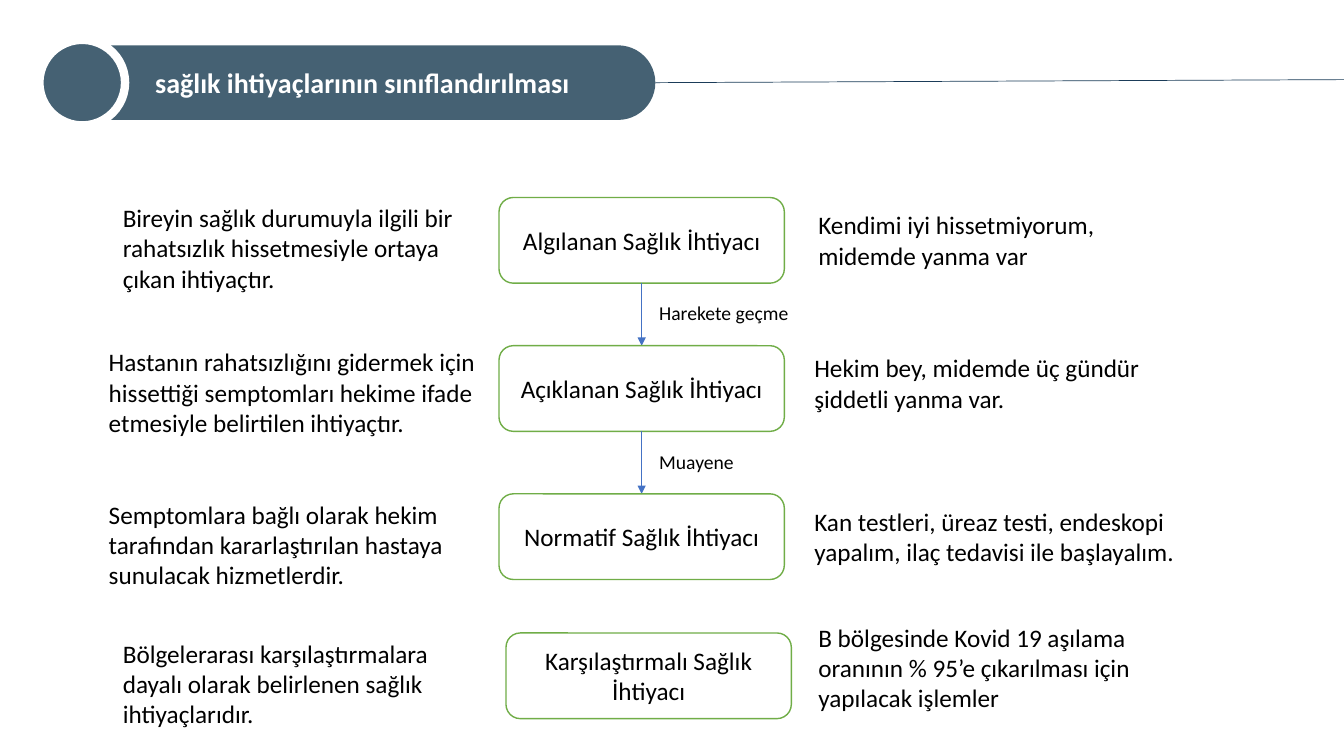
from collections import namedtuple

from lxml.etree import SubElement
from pptx import Presentation
from pptx.dml.color import RGBColor
from pptx.enum.shapes import MSO_CONNECTOR, MSO_SHAPE
from pptx.enum.text import MSO_ANCHOR, PP_ALIGN
from pptx.oxml.ns import qn
from pptx.util import Inches, Pt

# Every length is in hundredths of the slide's width (x) or height (y).
WIDTH, HEIGHT = Inches(13.33), Inches(7.5)
SLATE, NAVY, GREEN, BLUE = "456173", "1B3C59", "70AD47", "4472C4"
WHITE, BLACK = "FFFFFF", "000000"

Box = namedtuple("Box", "left top width height")
Side = namedtuple("Side", "left shift width lines text")
Stage = namedtuple("Stage", "name box definition example step")

FIRST_TOP, PITCH = 26.13, 19.6
NEED_LEFT, NEED_WIDTH, NEED_HEIGHT = 37.13, 21.23, 11.33


def stage_box(row):
    return Box(NEED_LEFT, FIRST_TOP + row * PITCH, NEED_WIDTH, NEED_HEIGHT)


STAGES = [
    Stage("Algılanan Sağlık İhtiyacı", stage_box(0),
          Side(8.4, 0, 27, 3, "Bireyin sağlık durumuyla ilgili bir rahatsızlık "
               "hissetmesiyle ortaya çıkan ihtiyaçtır."),
          Side(60.15, 0.94, 29.03, 2, "Kendimi iyi hissetmiyorum, midemde yanma var"),
          "Harekete geçme"),
    Stage("Açıklanan Sağlık İhtiyacı", stage_box(1),
          Side(7.35, -0.53, 29.03, 3, "Hastanın rahatsızlığını gidermek için hissettiği "
               "semptomları hekime ifade etmesiyle belirtilen ihtiyaçtır."),
          Side(59.85, 0.27, 29.03, 2, "Hekim bey, midemde üç gündür şiddetli yanma var."),
          "Muayene"),
    Stage("Normatif Sağlık İhtiyacı", stage_box(2),
          Side(7.35, 0, 28.05, 3, "Semptomlara bağlı olarak hekim tarafından "
               "kararlaştırılan hastaya sunulacak hizmetlerdir."),
          Side(59.85, 0.94, 29.03, 2, "Kan testleri, üreaz testi, endeskopi yapalım, "
               "ilaç tedavisi ile başlayalım."),
          None),
    Stage("Karşılaştırmalı Sağlık İhtiyacı", Box(37.65, 83.73, NEED_WIDTH, NEED_HEIGHT),
          Side(8.4, 0, 26.03, 3, "Bölgelerarası karşılaştırmalara dayalı olarak "
               "belirlenen sağlık ihtiyaçlarıdır."),
          Side(60.15, -2.13, 26.03, 3, "B bölgesinde Kovid 19 aşılama oranının "
               "% 95’e çıkarılması için yapılacak işlemler"),
          None),
]


def color(hex_string):
    return RGBColor.from_string(hex_string)


def across(share):
    return int(WIDTH * share / 100)


def down(share):
    return int(HEIGHT * share / 100)


def place(box):
    return across(box.left), down(box.top), across(box.width), down(box.height)


def write(shape, text, size, font_color=BLACK, bold=False, align=PP_ALIGN.LEFT):
    shape.text_frame.word_wrap = True
    paragraph = shape.text_frame.paragraphs[0]
    paragraph.text = text
    paragraph.alignment = align
    font = paragraph.font
    font.name, font.size, font.bold = "Calibri", Pt(size), bold
    font.color.rgb = color(font_color)


def add_panel(slide, preset, box, fill, line=None, line_width=1):
    shape = slide.shapes.add_shape(preset, *place(box))
    shape.shadow.inherit = False
    shape.fill.solid()
    shape.fill.fore_color.rgb = color(fill)
    if line:
        shape.line.color.rgb = color(line)
        shape.line.width = Pt(line_width)
    else:
        shape.line.fill.background()
    shape.text_frame.vertical_anchor = MSO_ANCHOR.MIDDLE
    return shape


def add_text(slide, box, text, size):
    write(slide.shapes.add_textbox(*place(box)), text, size)


def add_line(slide, start, end, line_color, arrow=False):
    line = slide.shapes.add_connector(
        MSO_CONNECTOR.STRAIGHT,
        across(start[0]), down(start[1]), across(end[0]), down(end[1]))
    line.line.color.rgb = color(line_color)
    line.line.width = Pt(0.5)
    if arrow:
        SubElement(line.line._get_or_add_ln(), qn("a:tailEnd"), type="triangle")
    SubElement(line._element.spPr, qn("a:effectLst"))


def add_header(slide, box, title):
    """Title band with a round badge at its left and a rule to the slide's edge."""
    band = add_panel(slide, MSO_SHAPE.ROUNDED_RECTANGLE, box, SLATE)
    band.adjustments[0] = 0.5
    band.text_frame.margin_left = across(7.8)
    write(band, title, 20, WHITE, bold=True)
    badge = Box(box.left, box.top - 0.73, 6.38, 11.33)
    add_panel(slide, MSO_SHAPE.OVAL, badge, SLATE, WHITE, 6)
    middle = box.top + box.height / 2
    add_line(slide, (box.left + box.width, middle), (100, middle - 0.4), NAVY)


def add_stage(slide, stage):
    """One need with its definition, its example and the step to the next need."""
    box = stage.box
    need = add_panel(slide, MSO_SHAPE.ROUNDED_RECTANGLE, box, WHITE, GREEN)
    write(need, stage.name, 18, align=PP_ALIGN.CENTER)
    for side in (stage.definition, stage.example):
        side_box = Box(side.left, box.top + side.shift, side.width, 1.33 + 4 * side.lines)
        add_text(slide, side_box, side.text, 18)
    if stage.step:
        center = box.left + box.width / 2
        add_line(slide, (center, box.top + box.height), (center, box.top + PITCH),
                 BLUE, arrow=True)
        add_text(slide, Box(center + 0.56, box.top + 13.07, 13.2, 4.53), stage.step, 14)


def main():
    presentation = Presentation()
    presentation.slide_width, presentation.slide_height = WIDTH, HEIGHT
    slide = presentation.slides.add_slide(presentation.slide_layouts[6])
    add_header(slide, Box(2.93, 6, 45.83, 9.87), "sağlık ihtiyaçlarının sınıflandırılması")
    for stage in STAGES:
        add_stage(slide, stage)
    presentation.save("out.pptx")


if __name__ == "__main__":
    main()
